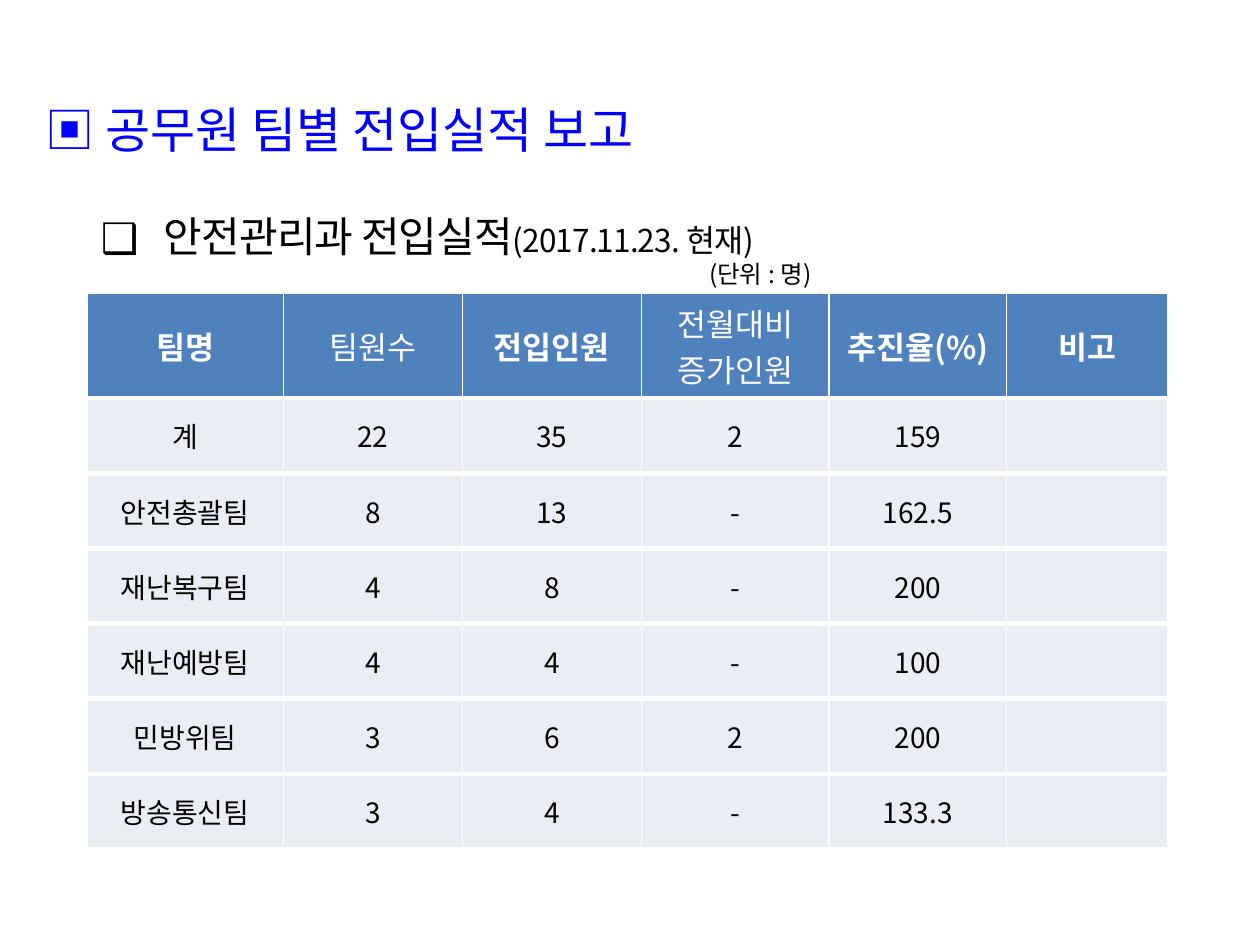
from lxml import etree
from pptx import Presentation
from pptx.dml.color import RGBColor
from pptx.enum.text import MSO_ANCHOR, MSO_AUTO_SIZE, PP_ALIGN
from pptx.oxml.ns import qn
from pptx.util import Inches, Pt

MIDDLE = MSO_ANCHOR.MIDDLE
LEFT, CENTER = PP_ALIGN.LEFT, PP_ALIGN.CENTER
NO_FIT = MSO_AUTO_SIZE.NONE
FONT = "Noto Sans CJK KR"
BLACK, WHITE, BLUE = "000000", "FFFFFF", "0000FF"
HEAD_FILL, BODY_FILL = "4F81BD", "E9EDF4"

TITLE = "▣ 공무원 팀별 전입실적 보고"
HEADING = "안전관리과 전입실적"
AS_OF = "(2017.11.23. 현재)"
UNIT = "(단위 : 명)"

HEADERS = [("팀명", True), ("팀원수", False), ("전입인원", True),
           ("전월대비 증가인원", False), ("추진율(%)", True), ("비고", True)]
ROWS = [
    ("계", "22", "35", "2", "159", ""),
    ("안전총괄팀", "8", "13", "-", "162.5", ""),
    ("재난복구팀", "4", "8", "-", "200", ""),
    ("재난예방팀", "4", "4", "-", "100", ""),
    ("민방위팀", "3", "6", "2", "200", ""),
    ("방송통신팀", "3", "4", "-", "133.3", ""),
]
COL_WIDTHS = [1.56, 1.42, 1.42, 1.49, 1.41, 1.28]
TABLE_LEFT, TABLE_TOP, TABLE_HEIGHT, HEAD_HEIGHT = 0.69, 2.33, 4.41, 0.83


def rgb(color):
    return RGBColor.from_string(color)


def add_run(p, text, size, color, bold=False):
    r = p.add_run()
    r.text = text
    r.font.name = FONT
    r.font.size = Pt(size)
    r.font.bold = bold
    r.font.color.rgb = rgb(color)
    etree.SubElement(r.font._element, qn("a:ea"), typeface=FONT)
    return r


def place(sp, left, top, width, height):
    sp.left, sp.top = Inches(left), Inches(top)
    sp.width, sp.height = Inches(width), Inches(height)
    tf = sp.text_frame
    tf.word_wrap = True
    tf.auto_size = NO_FIT
    tf.vertical_anchor = MIDDLE
    p = tf.paragraphs[0]
    p.alignment = LEFT
    p.space_before = Pt(0)
    return p


def set_bullet(p, char, margin, hanging):
    pPr = p._p.get_or_add_pPr()
    pPr.set("marL", str(Inches(margin)))
    pPr.set("indent", str(-Inches(hanging)))
    color = etree.SubElement(pPr, qn("a:buClr"))
    etree.SubElement(color, qn("a:srgbClr"), val=BLACK)
    etree.SubElement(pPr, qn("a:buFont"), typeface=FONT)
    etree.SubElement(pPr, qn("a:buChar"), char=char)


def set_borders(cell, top):
    tcPr = cell._tc.get_or_add_tcPr()
    for side, width in (("L", 1), ("R", 1), ("T", top), ("B", 3)):
        ln = etree.SubElement(tcPr, qn("a:ln" + side), w=str(Pt(width)))
        fill = etree.SubElement(ln, qn("a:solidFill"))
        etree.SubElement(fill, qn("a:srgbClr"), val=WHITE)


def fill_cell(cell, text, size, color, fill, bold=False, top=3):
    set_borders(cell, top)
    cell.fill.solid()
    cell.fill.fore_color.rgb = rgb(fill)
    cell.vertical_anchor = MIDDLE
    p = cell.text_frame.paragraphs[0]
    p.alignment = CENTER
    if text:
        add_run(p, text, size, color, bold)


def add_team_table(s):
    table = s.shapes.add_table(
        len(ROWS) + 1, len(HEADERS), Inches(TABLE_LEFT), Inches(TABLE_TOP),
        Inches(sum(COL_WIDTHS)), Inches(TABLE_HEIGHT)).table
    for column, width in zip(table.columns, COL_WIDTHS):
        column.width = Inches(width)
    row_height = (TABLE_HEIGHT - HEAD_HEIGHT) / len(ROWS)
    for i, row in enumerate(table.rows):
        row.height = Inches(row_height if i else HEAD_HEIGHT)
    for j, (text, bold) in enumerate(HEADERS):
        fill_cell(table.cell(0, j), text, 18, WHITE, HEAD_FILL, bold, top=1)
    for i, values in enumerate(ROWS, 1):
        for j, text in enumerate(values):
            fill_cell(table.cell(i, j), text, 16, BLACK, BODY_FILL)


def main():
    prs = Presentation()
    prs.slide_width, prs.slide_height = Inches(10), Inches(7.5)
    s = prs.slides.add_slide(prs.slide_layouts[1])

    p = place(s.shapes.title, 0.26, 0.6, 9.5, 0.85)
    add_run(p, TITLE, 28, BLUE)

    p = place(s.placeholders[1], 0.2, 1.5, 9.57, 0.74)
    set_bullet(p, "❑", 1, 0.5)
    r = add_run(p, HEADING, 24, BLACK)
    r.font._element.set("spc", "-50")
    r = add_run(p, AS_OF, 18, BLACK)
    r.font._element.set("spc", "-50")

    unit = s.shapes.add_textbox(0, 0, 0, 0)
    p = place(unit, 5.53, 1.97, 1.6, 0.4)
    add_run(p, UNIT, 14, BLACK)

    add_team_table(s)
    prs.save("out.pptx")


if __name__ == "__main__":
    main()
